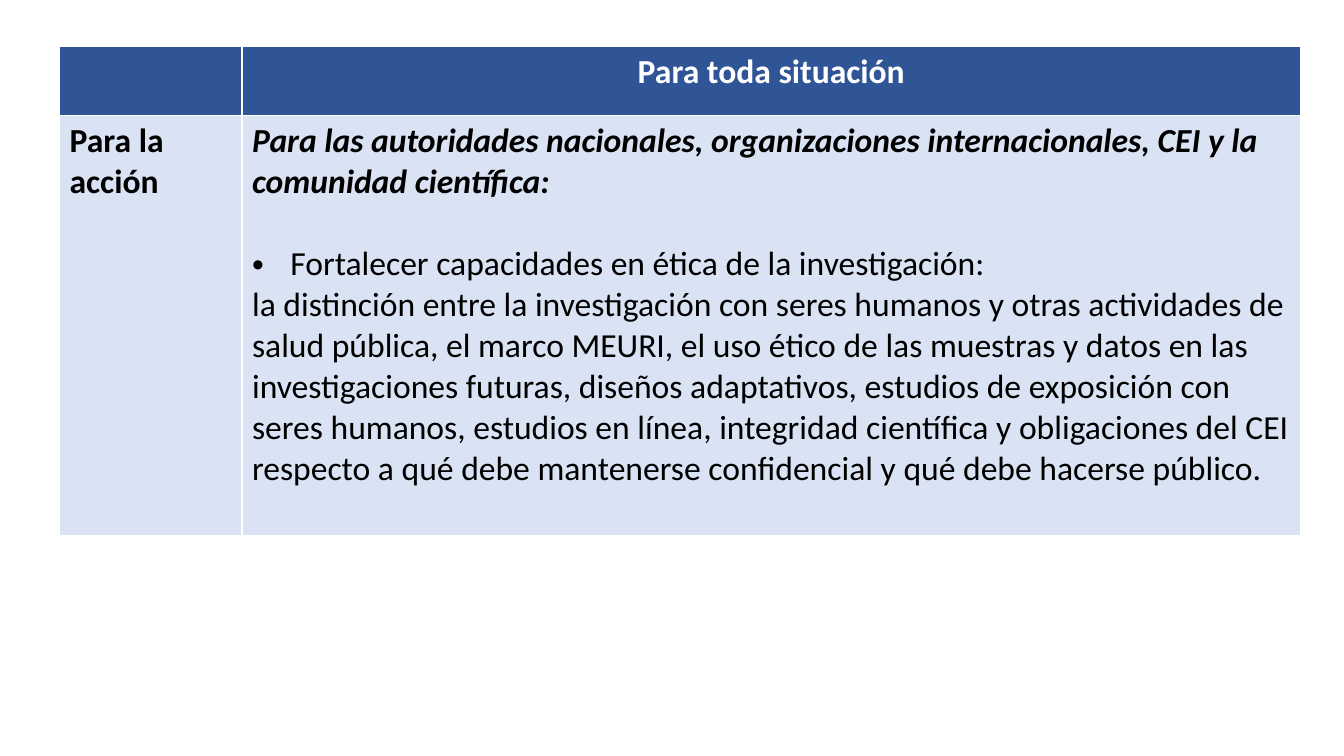
"""Build a slide with a table of actions for research ethics."""
from lxml import etree
from pptx import Presentation
from pptx.dml.color import RGBColor
from pptx.enum.text import PP_ALIGN
from pptx.oxml.ns import qn
from pptx.util import Inches, Pt

CENTER, LEFT = PP_ALIGN.CENTER, PP_ALIGN.LEFT
COLORS = {"head": "2F5597", "body": "DAE3F3", "white": "FFFFFF", "black": "000000"}
WIDTHS = [1.81, 10.5]
HEIGHTS = [0.69, 4.16]


def add_text(para, text, color, bold=True, italic=False):
    """Add one run in the table's type."""
    run = para.add_run()
    run.text = text
    font = run.font
    font.name, font.size = "Calibri", Pt(24)
    font.bold, font.italic = bold, italic
    font.color.rgb = RGBColor.from_string(COLORS[color])


deck = Presentation()
deck.slide_width, deck.slide_height = Inches(13.33), Inches(7.5)
slide = deck.slides.add_slide(deck.slide_layouts[6])

table = slide.shapes.add_table(
    2, 2, Inches(0.59), Inches(0.46), Inches(sum(WIDTHS)), Inches(sum(HEIGHTS))
).table
for col, width in zip(table.columns, WIDTHS):
    col.width = Inches(width)
for row, height, fill in zip(table.rows, HEIGHTS, ["head", "body"]):
    row.height = Inches(height)
    for cell in row.cells:
        cell.fill.solid()
        cell.fill.fore_color.rgb = RGBColor.from_string(COLORS[fill])

title = table.cell(0, 1).text_frame.paragraphs[0]
title.alignment = CENTER
add_text(title, "Para toda situación", "white")

label = table.cell(1, 0).text_frame.paragraphs[0]
label.alignment = LEFT
add_text(label, "Para la acción", "black")

frame = table.cell(1, 1).text_frame
intro = frame.paragraphs[0]
add_text(
    intro,
    "Para las autoridades nacionales, organizaciones internacionales, "
    "CEI y la comunidad científica:",
    "black",
    italic=True,
)

point = frame.add_paragraph()
props = point._p.get_or_add_pPr()
props.set("marL", str(Inches(0.38)))
props.set("indent", str(Inches(-0.38)))
etree.SubElement(props, qn("a:buFont")).set("typeface", "Arial")
etree.SubElement(props, qn("a:buChar")).set("char", "•")
point.space_before = Pt(29.3)
add_text(point, "Fortalecer capacidades en ética de la investigación:", "black", bold=False)

detail = frame.add_paragraph()
add_text(
    detail,
    "la distinción entre la investigación con seres humanos y otras actividades "
    "de salud pública, el marco MEURI, el uso ético de las muestras y datos en "
    "las investigaciones futuras, diseños adaptativos, estudios de exposición "
    "con seres humanos, estudios en línea, integridad científica y obligaciones "
    "del CEI respecto a qué debe mantenerse confidencial y qué debe hacerse público.",
    "black",
    bold=False,
)

deck.save("out.pptx")
